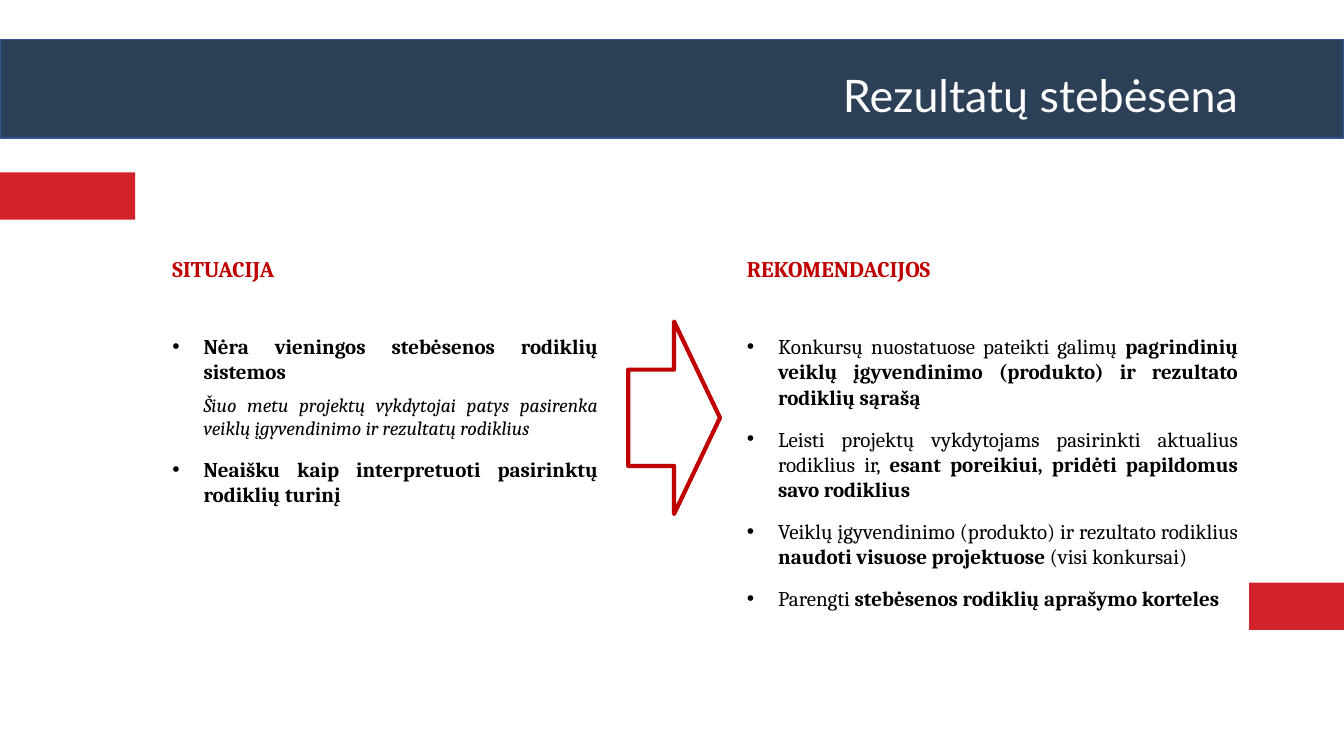
from dataclasses import dataclass

from lxml.etree import SubElement
from pptx import Presentation
from pptx.dml.color import RGBColor
from pptx.enum.shapes import MSO_SHAPE as Preset
from pptx.enum.text import MSO_ANCHOR as Anchor
from pptx.enum.text import MSO_AUTO_SIZE as AutoSize
from pptx.enum.text import PP_ALIGN as Align
from pptx.oxml.ns import qn
from pptx.util import Inches, Pt


@dataclass(frozen=True)
class Theme:
    navy: str = "2C4058"
    navy_edge: str = "325491"
    red: str = "D2232A"
    dark_red: str = "C00000"
    white: str = "FFFFFF"
    black: str = "000000"
    title_font: str = "Lato"
    body_font: str = "Cambria"
    title_size: int = 32
    heading_size: int = 16
    bullet_size: int = 15
    note_size: int = 14


THEME = Theme()
SLIDE_WIDTH, SLIDE_HEIGHT = Inches(13.33), Inches(7.5)
INDENT = Inches(0.31)
COLUMN_TOP = 33.07
TAG_HEIGHT = 6.27

# Each entry is (kind, runs); each run is (text, bold)
SITUATION = [
    ("bullet", [("Nėra vieningos stebėsenos rodiklių sistemos", True)]),
    ("note", [("Šiuo metu projektų vykdytojai patys pasirenka "
               "veiklų įgyvendinimo ir rezultatų rodiklius", False)]),
    ("bullet", [("Neaišku kaip interpretuoti pasirinktų rodiklių turinį", True)]),
]
RECOMMENDATIONS = [
    ("bullet", [("Konkursų nuostatuose pateikti galimų ", False),
                ("pagrindinių veiklų įgyvendinimo (produkto) ir "
                 "rezultato rodiklių sąrašą", True)]),
    ("bullet", [("Leisti projektų vykdytojams pasirinkti aktualius rodiklius ir, ", False),
                ("esant poreikiui, pridėti papildomus savo rodiklius", True)]),
    ("bullet", [("Veiklų įgyvendinimo (produkto) ir rezultato rodiklius ", False),
                ("naudoti visuose projektuose ", True),
                ("(visi konkursai)", False)]),
    ("bullet", [("Parengti ", False),
                ("stebėsenos rodiklių aprašymo korteles", True)]),
]


def place(left, top, width, height):
    """Turn percentages of the slide into lengths."""
    return (int(SLIDE_WIDTH * left / 100), int(SLIDE_HEIGHT * top / 100),
            int(SLIDE_WIDTH * width / 100), int(SLIDE_HEIGHT * height / 100))


def add_preset(slide, preset, area, fill=None, line=None, weight=1):
    shape = slide.shapes.add_shape(preset, *place(*area))
    shape.shadow.inherit = False
    if fill:
        shape.fill.solid()
        shape.fill.fore_color.rgb = RGBColor.from_string(fill)
    else:
        shape.fill.background()
    if line:
        shape.line.color.rgb = RGBColor.from_string(line)
        shape.line.width = Pt(weight)
    else:
        shape.line.fill.background()
    return shape


def add_run(paragraph, text, size, color, name=THEME.body_font, bold=False, italic=False):
    run = paragraph.add_run()
    run.text = text
    font = run.font
    font.name, font.size, font.bold, font.italic = name, Pt(size), bold, italic
    font.color.rgb = RGBColor.from_string(color)


def set_indent(paragraph, bullet):
    properties = paragraph._p.get_or_add_pPr()
    properties.set("marL", str(INDENT))
    properties.set("indent", str(-INDENT if bullet else 0))
    if bullet:
        SubElement(properties, qn("a:buFont")).set("typeface", "Arial")
        SubElement(properties, qn("a:buChar")).set("char", "•")


def add_title(slide, text):
    shape = add_preset(slide, Preset.RECTANGLE, (26.7, 9.07, 66.17, 7.87), THEME.navy)
    frame = shape.text_frame
    frame.word_wrap = True
    frame.vertical_anchor = Anchor.MIDDLE
    paragraph = frame.paragraphs[0]
    paragraph.alignment = Align.RIGHT
    paragraph.line_spacing = 0.9
    add_run(paragraph, text, THEME.title_size, THEME.white, THEME.title_font)


def add_column(slide, area, heading, entries):
    frame = slide.shapes.add_textbox(*place(*area)).text_frame
    frame.word_wrap = True
    frame.auto_size = AutoSize.SHAPE_TO_FIT_TEXT
    paragraph = frame.paragraphs[0]
    paragraph.alignment = Align.JUSTIFY
    add_run(paragraph, heading, THEME.heading_size, THEME.dark_red, bold=True)

    for index, (kind, runs) in enumerate(entries):
        is_note = kind == "note"
        paragraph = frame.add_paragraph()
        paragraph.alignment = Align.JUSTIFY
        # The first entry stands well clear of the heading
        paragraph.space_before = Pt(37 if index == 0 else 6 if is_note else 12)
        set_indent(paragraph, bullet=not is_note)
        size = THEME.note_size if is_note else THEME.bullet_size
        for text, bold in runs:
            add_run(paragraph, text, size, THEME.black, bold=bold, italic=is_note)


def main():
    presentation = Presentation()
    presentation.slide_width, presentation.slide_height = SLIDE_WIDTH, SLIDE_HEIGHT
    slide = presentation.slides.add_slide(presentation.slide_layouts[6])

    # Title band
    add_preset(slide, Preset.RECTANGLE, (0, 5.2, 100, 13.07), THEME.navy, THEME.navy_edge)
    add_title(slide, "Rezultatų stebėsena")

    # Situation leads to recommendations
    add_column(slide, (12.08, COLUMN_TOP, 33.16, 39.73), "SITUACIJA", SITUATION)
    add_column(slide, (54.84, COLUMN_TOP, 38.03, 56.93), "REKOMENDACIJOS", RECOMMENDATIONS)
    add_preset(slide, Preset.RIGHT_ARROW, (46.74, 42.53, 6.83, 25.47),
               line=THEME.dark_red, weight=3)

    # Red tags on the slide edges
    for left, top, width in ((0, 22.8, 10.05), (92.95, 77.07, 7.05)):
        add_preset(slide, Preset.RECTANGLE, (left, top, width, TAG_HEIGHT), THEME.red)

    presentation.save("out.pptx")


if __name__ == "__main__":
    main()
